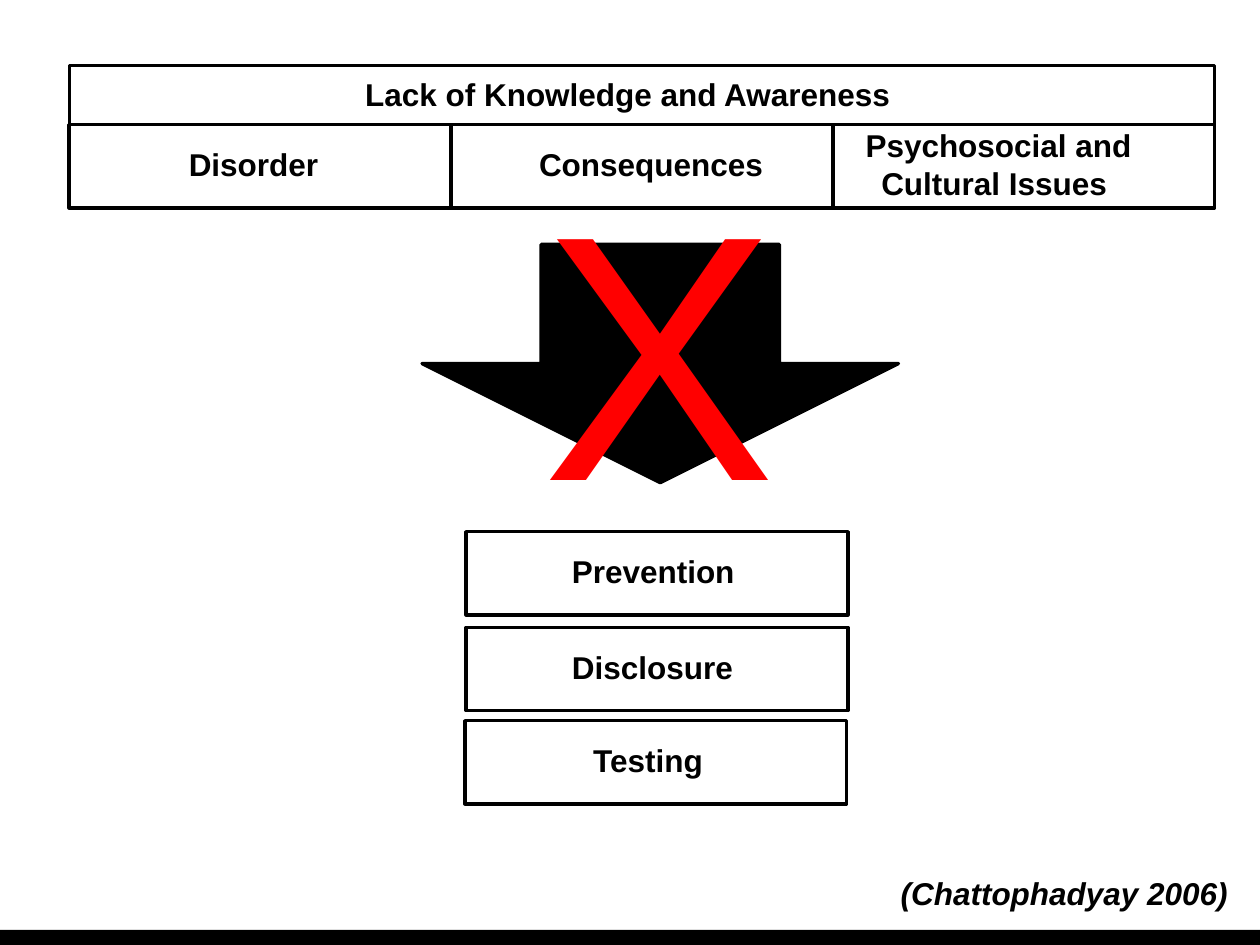
from dataclasses import dataclass
from typing import Optional

from pptx import Presentation
from pptx.dml.color import RGBColor
from pptx.enum.shapes import MSO_SHAPE
from pptx.enum.text import PP_ALIGN
from pptx.util import Inches, Pt

RECT, DOWN_ARROW = MSO_SHAPE.RECTANGLE, MSO_SHAPE.DOWN_ARROW
LEFT, CENTER = PP_ALIGN.LEFT, PP_ALIGN.CENTER
BLACK, RED = "000000", "FF0000"

SLIDE_W, SLIDE_H = 10, 7.5
FOOTER_H = 0.12
GRID_LEFT, GRID_TOP = 0.55, 0.52
COL_W, HEAD_H, ROW_H = 3.03, 0.47, 0.66
LABEL_H, LABEL_DROP = 0.4, 0.11
LABEL_FORMAT = {"name": "Arial", "size": Pt(18), "bold": True}


@dataclass
class Box:
    left: float
    top: float
    width: float
    height: float


@dataclass
class Cell:
    """A framed box with a label placed over it."""
    text: str
    frame: Box
    label: Box
    align: PP_ALIGN = LEFT
    wrap: bool = False


def rgb(color: str) -> RGBColor:
    return RGBColor.from_string(color)


def inches(box: Box) -> list:
    return [Inches(v) for v in (box.left, box.top, box.width, box.height)]


def add_shape(slide, kind, box: Box, fill: Optional[str] = None,
              line: Optional[str] = BLACK):
    sp = slide.shapes.add_shape(kind, *inches(box))
    sp.shadow.inherit = False
    if fill:
        sp.fill.solid()
        sp.fill.fore_color.rgb = rgb(fill)
    else:
        sp.fill.background()
    if line:
        sp.line.color.rgb = rgb(line)
        sp.line.width = Pt(2)
    else:
        sp.line.fill.background()
    return sp


def add_text(slide, text: str, box: Box, color: str = BLACK,
             align: PP_ALIGN = LEFT, wrap: bool = True, **overrides):
    tf = slide.shapes.add_textbox(*inches(box)).text_frame
    tf.word_wrap = wrap
    p = tf.paragraphs[0]
    p.alignment = align
    r = p.add_run()
    r.text = text
    r.font.color.rgb = rgb(color)
    for key, value in {**LABEL_FORMAT, **overrides}.items():
        setattr(r.font, key, value)


def add_cell(slide, cell: Cell):
    add_shape(slide, RECT, cell.frame)
    add_text(slide, cell.text, cell.label, align=cell.align, wrap=cell.wrap)


def topic_frame(col: int) -> Box:
    return Box(GRID_LEFT + col * COL_W, GRID_TOP + HEAD_H, COL_W, ROW_H)


def outcome(text: str, left: float, top: float,
            label_left: float, label_w: float) -> Cell:
    return Cell(text, Box(left, top, COL_W, ROW_H),
                Box(label_left, top + LABEL_DROP, label_w, LABEL_H))


CELLS = [
    Cell("Lack of Knowledge and Awareness",
         Box(GRID_LEFT, GRID_TOP, 3 * COL_W, HEAD_H),
         Box(2.8, 0.55, 4.41, LABEL_H)),
    Cell("Disorder", topic_frame(0), Box(1.4, 1.1, 1.24, LABEL_H)),
    Cell("Consequences", topic_frame(1), Box(4.18, 1.1, 2, LABEL_H)),
    Cell("Psychosocial and Cultural Issues ", topic_frame(2),
         Box(6.6, 0.95, 2.65, 0.71), CENTER, True),
    outcome("Prevention", 3.7, 4.22, 4.44, 1.51),
    outcome("Disclosure", 3.7, 4.98, 4.44, 1.49),
    outcome("Testing", 3.69, 5.72, 4.61, 1.08),
]


def main():
    prs = Presentation()
    prs.slide_width, prs.slide_height = Inches(SLIDE_W), Inches(SLIDE_H)
    s = prs.slides.add_slide(prs.slide_layouts[6])

    add_shape(s, RECT, Box(0, SLIDE_H - FOOTER_H, SLIDE_W, FOOTER_H),
              fill=BLACK, line=None)
    add_text(s, "(Chattophadyay 2006)", Box(7.05, 6.89, 2.91, LABEL_H),
             italic=True)
    for cell in CELLS:
        add_cell(s, cell)
    add_shape(s, DOWN_ARROW, Box(3.35, 1.94, 3.78, 1.89), fill=BLACK)
    add_text(s, "X", Box(4.21, 0.99, 2.13, 3.47), color=RED,
             size=Pt(200), bold=False)

    prs.save("out.pptx")


if __name__ == "__main__":
    main()
